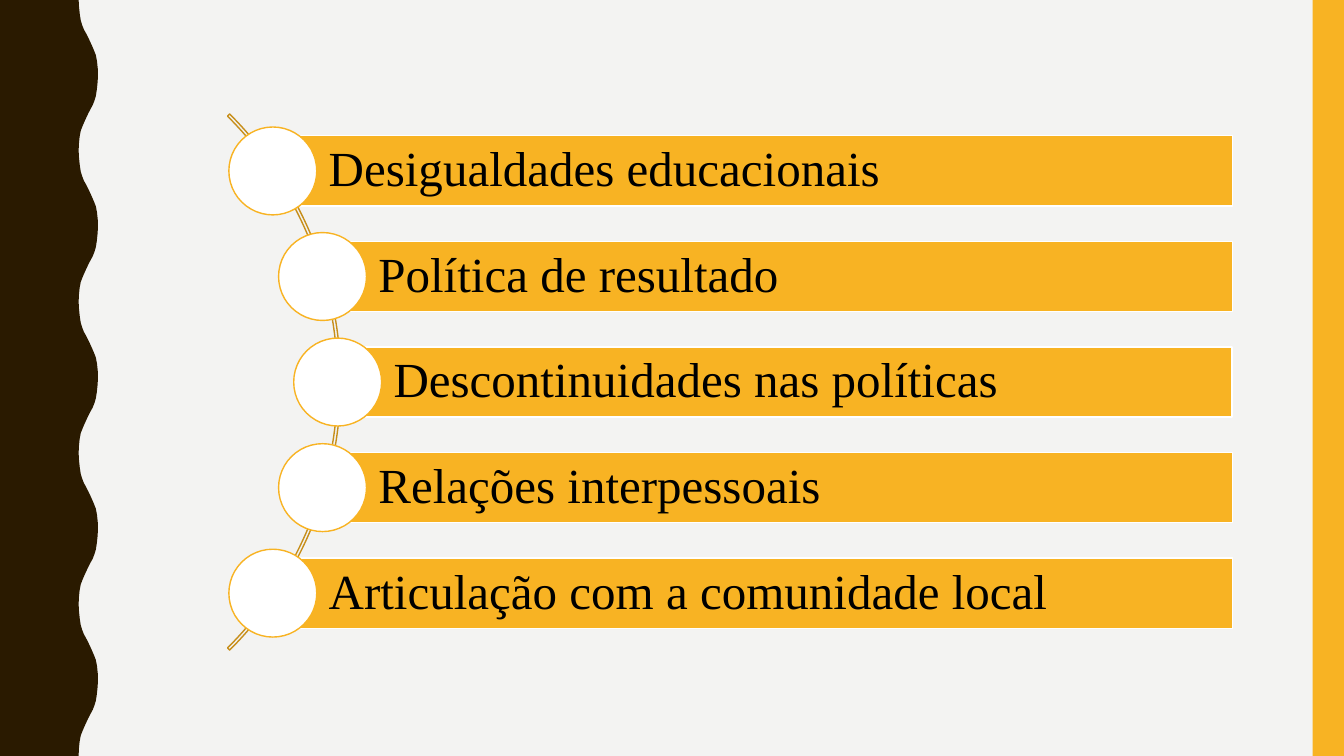
from dataclasses import dataclass
from math import sqrt

from pptx import Presentation
from pptx.dml.color import RGBColor
from pptx.enum.shapes import MSO_SHAPE
from pptx.enum.text import MSO_ANCHOR, PP_ALIGN
from pptx.util import Pt


@dataclass(frozen=True)
class Theme:
    paper: str = "F3F3F2"
    dark: str = "2A1A00"
    accent: str = "F8B323"
    arc: str = "C78F1C"
    white: str = "FFFFFF"
    text: str = "000000"
    font: str = "Times New Roman"
    size: float = 35
    line: float = 1


THEME = Theme()
WIDTH, HEIGHT = 960, 540
TOPICS = [
    "Desigualdades educacionais",
    "Política de resultado",
    "Descontinuidades nas políticas",
    "Relações interpessoais",
    "Articulação com a comunidade local",
]
# Half a wave: distance across (share of the depth) and down (share of the half)
HALF_WAVE = [
    (0, 0), (0.02, 0.09), (0.06, 0.19), (0.11, 0.27), (0.18, 0.33),
    (0.27, 0.39), (0.38, 0.44), (0.5, 0.5), (0.61, 0.56), (0.7, 0.61),
    (0.8, 0.67), (0.89, 0.73), (0.95, 0.81), (0.99, 0.91), (1, 1),
]


def paint(s, fill=None, line=None):
    """Set fill and outline, and drop the shadow."""
    s.shadow.inherit = False
    if fill:
        s.fill.solid()
        s.fill.fore_color.rgb = RGBColor.from_string(fill)
    else:
        s.fill.background()
    if line:
        s.line.color.rgb = RGBColor.from_string(line)
        s.line.width = Pt(THEME.line)
    else:
        s.line.fill.background()


def add_shape(slide, kind, x, y, w, h, **colors):
    s = slide.shapes.add_shape(kind, Pt(x), Pt(y), Pt(w), Pt(h))
    paint(s, **colors)
    return s


def write(s, text, *, size=THEME.size, color=THEME.text, left=7.2, margin=7.2, spacing=0.9):
    tf = s.text_frame
    tf.word_wrap = True
    tf.vertical_anchor = MSO_ANCHOR.MIDDLE
    tf.margin_left = Pt(left)
    tf.margin_top = tf.margin_right = tf.margin_bottom = Pt(margin)
    p = tf.paragraphs[0]
    p.alignment = PP_ALIGN.LEFT
    p.line_spacing = spacing
    r = p.add_run()
    r.text = text
    r.font.name = THEME.font
    r.font.size = Pt(size)
    r.font.color.rgb = RGBColor.from_string(color)


def add_wavy_edge(slide, x, y, w, h, depth=13.8, halves=10):
    """Dark band whose right side is a row of equal waves."""
    step = h / halves
    points = []
    for i in range(halves):
        for across, down in HALF_WAVE:
            share = 1 - across if i % 2 else across
            points.append((Pt(x + w - depth + depth * share), Pt(y + step * (i + down))))
    points.append((Pt(x), Pt(y + h)))
    builder = slide.shapes.build_freeform(Pt(x), Pt(y))
    builder.add_line_segments(points, close=True)
    paint(builder.convert_to_shape(), fill=THEME.dark)


def add_topic_list(slide, x, y, w, h, topics):
    """Bars whose circles sit on an arc that bulges to the right."""
    pitch, bar_h, circle = 75.4, 50.3, 62.8
    diameter, radius = 541.5, 268.6
    center_x, center_y = x - 190.8, y + h / 2

    # Thin arc behind the list
    arc = add_shape(slide, MSO_SHAPE.BLOCK_ARC, center_x - diameter / 2,
                    center_y - diameter / 2, diameter, diameter, line=THEME.arc)
    for i, value in enumerate((189, 27, 0.004)):
        arc.adjustments[i] = value

    # One bar and one circle for each topic
    for i, topic in enumerate(topics):
        offset = (i - (len(topics) - 1) / 2) * pitch
        row_x = center_x + sqrt(radius ** 2 - offset ** 2)
        row_y = center_y + offset
        bar = add_shape(slide, MSO_SHAPE.RECTANGLE, row_x, row_y - bar_h / 2,
                        x + w - row_x, bar_h, fill=THEME.accent, line=THEME.white)
        write(bar, topic, left=39.9)
        add_shape(slide, MSO_SHAPE.OVAL, row_x - circle / 2, row_y - circle / 2,
                  circle, circle, fill=THEME.white, line=THEME.accent)


def build_slide(prs):
    slide = prs.slides.add_slide(prs.slide_layouts[6])
    slide.background.fill.solid()
    slide.background.fill.fore_color.rgb = RGBColor.from_string(THEME.paper)
    add_wavy_edge(slide, 0, 0, 70, HEIGHT)
    # Accent strip on the right
    add_shape(slide, MSO_SHAPE.RECTANGLE, WIDTH - 22.4, 0, 22.4, HEIGHT, fill=THEME.accent)
    add_topic_list(slide, 163.4, 81.4, 716.8, 383, TOPICS)


def main():
    prs = Presentation()
    prs.slide_width, prs.slide_height = Pt(WIDTH), Pt(HEIGHT)
    build_slide(prs)
    prs.save("out.pptx")


if __name__ == "__main__":
    main()
